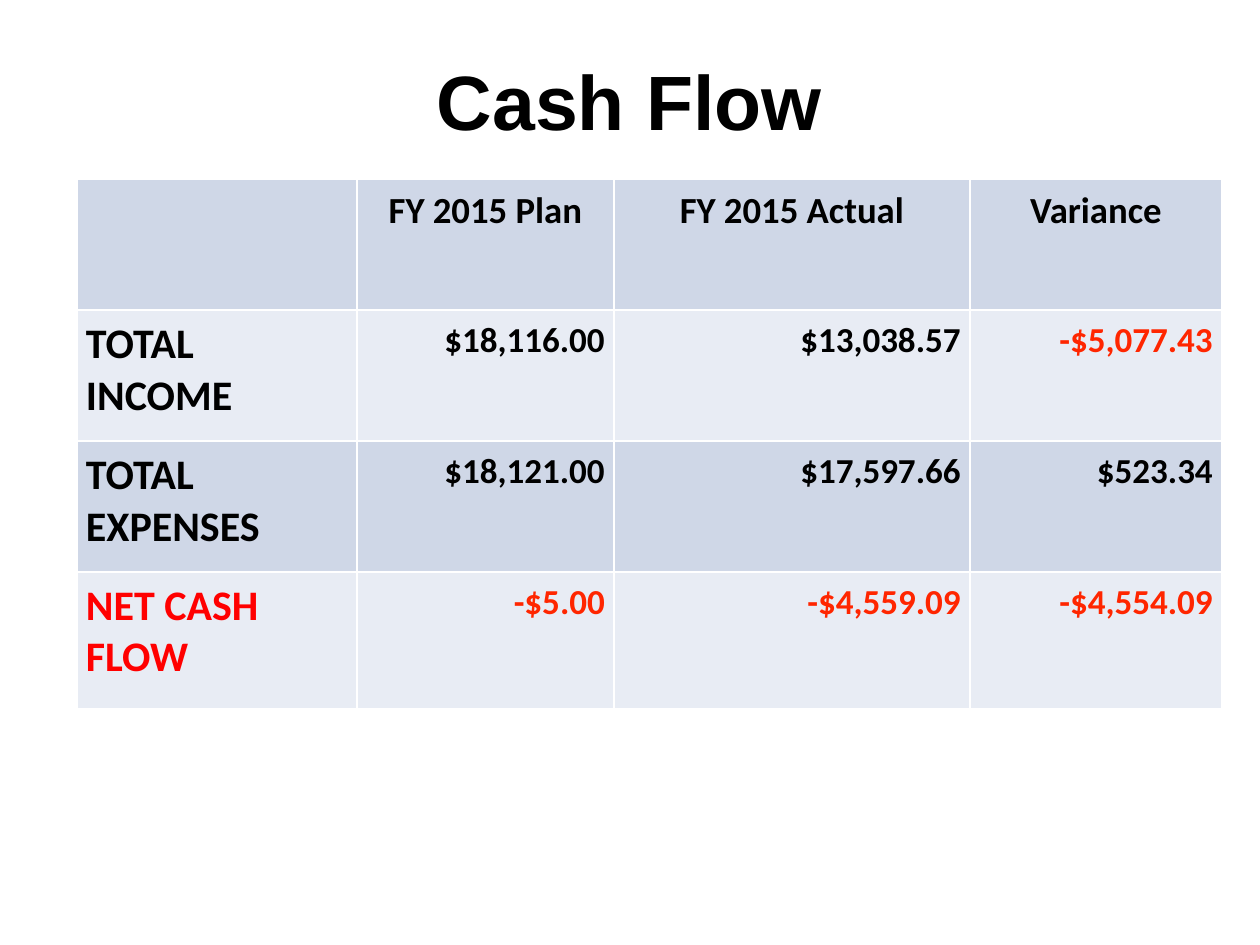
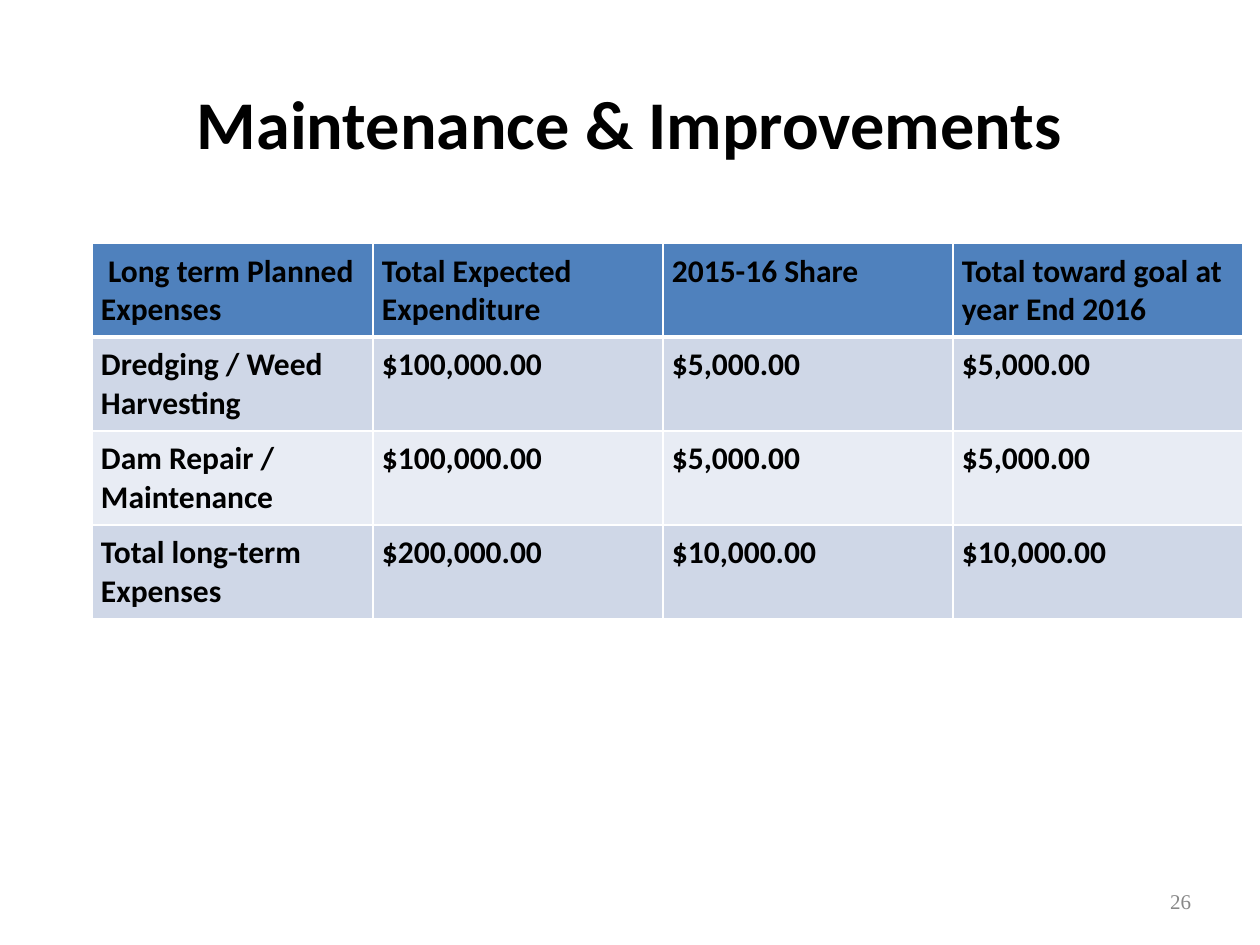
from lxml import etree
from pptx import Presentation
from pptx.dml.color import RGBColor
from pptx.enum.text import MSO_ANCHOR, PP_ALIGN
from pptx.oxml.ns import qn
from pptx.util import Pt

LEFT, CENTER, RIGHT = PP_ALIGN.LEFT, PP_ALIGN.CENTER, PP_ALIGN.RIGHT
MIDDLE = MSO_ANCHOR.MIDDLE
EMU_PER_PX = 914400 / 126
BLANK_LAYOUT = 6
TEXT_INSET, CELL_INSET = 6, 9
SIDES = ("left", "right", "top", "bottom")

COLORS = {
    "ink": "000000",
    "border": "FFFFFF",
    "header": "4F81BD",
    "dark_band": "CFD7E7",
    "light_band": "E8ECF4",
    "negative": "FF2600",
    "deficit": "FF0000",
    "page_number": "888888",
}

CASH_FLOW = [
    ["", "FY 2015 Plan", "FY 2015 Actual", "Variance"],
    ["TOTAL INCOME", "$18,116.00", "$13,038.57", "-$5,077.43"],
    ["TOTAL EXPENSES", "$18,121.00", "$17,597.66", "$523.34"],
    ["NET CASH FLOW", "-$5.00", "-$4,559.09", "-$4,554.09"],
]
LONG_TERM_EXPENSES = [
    [" Long term Planned Expenses", "Total Expected Expenditure",
     "2015-16 Share", "Total toward goal at year End 2016"],
    ["Dredging / Weed Harvesting", "$100,000.00", "$5,000.00", "$5,000.00"],
    ["Dam Repair / Maintenance", "$100,000.00", "$5,000.00", "$5,000.00"],
    ["Total long-term Expenses", "$200,000.00", "$10,000.00", "$10,000.00"],
]


def px(length):
    return round(length * EMU_PER_PX)


def rgb(name):
    return RGBColor.from_string(COLORS[name])


def set_insets(owner, inset):
    for side in SIDES:
        setattr(owner, f"margin_{side}", px(inset))


def write(frame, text, size, font="Calibri", color="ink", bold=True, align=LEFT):
    paragraph = frame.paragraphs[0]
    paragraph.alignment = align
    run = paragraph.add_run()
    run.text = text
    for attribute, value in {"size": Pt(size), "name": font, "bold": bold}.items():
        setattr(run.font, attribute, value)
    run.font.color.rgb = rgb(color)


def add_text(slide, box, text, **style):
    frame = slide.shapes.add_textbox(*map(px, box)).text_frame
    frame.word_wrap = True
    frame.vertical_anchor = MIDDLE
    set_insets(frame, TEXT_INSET)
    write(frame, text, **style)


def add_title(slide, box, text, size, font):
    add_text(slide, box, text, size=size, font=font, align=CENTER)


def add_page_number(slide, box, number):
    add_text(slide, box, number, size=12, font="Times New Roman",
             color="page_number", bold=False, align=RIGHT)


def set_borders(cell, widths):
    properties = cell._tc.get_or_add_tcPr()
    for side in SIDES:
        line = etree.SubElement(properties, qn(f"a:ln{side[0].upper()}"),
                                w=str(Pt(widths.get(side, 1))))
        fill = etree.SubElement(line, qn("a:solidFill"))
        etree.SubElement(fill, qn("a:srgbClr"), val=COLORS["border"])


def add_grid(slide, origin, widths, heights, rows, bands, cell_style, header_rule=1):
    box = (*origin, sum(widths), sum(heights))
    table = slide.shapes.add_table(len(rows), len(widths), *map(px, box)).table
    for column, width in zip(table.columns, widths):
        column.width = px(width)
    for row, height in zip(table.rows, heights):
        row.height = px(height)
    for r, texts in enumerate(rows):
        for c, text in enumerate(texts):
            cell = table.cell(r, c)
            set_insets(cell, CELL_INSET)
            rule_side = {0: "bottom", 1: "top"}.get(r)
            set_borders(cell, {rule_side: header_rule})
            cell.fill.solid()
            cell.fill.fore_color.rgb = rgb(bands[r])
            if text:
                write(cell.text_frame, text, **cell_style(r, c, text))


def cash_flow_style(row, column, text):
    if row == 0:
        return {"size": 21, "align": CENTER}
    if column == 0:
        return {"size": 24, "color": "deficit" if text.startswith("NET") else "ink"}
    color = "negative" if text.startswith("-") else "ink"
    return {"size": 20, "color": color, "align": RIGHT}


def expense_style(row, column, text):
    return {"size": 18}


def build_cash_flow(slide):
    add_title(slide, (94, 42, 1071, 115), "Cash Flow", 44, "Arial")
    add_grid(slide, (77, 179), (280, 257, 356, 252), (131, 131, 131, 137), CASH_FLOW,
             ("dark_band", "light_band") * 2, cash_flow_style)


def build_maintenance(slide):
    add_title(slide, (94, 43, 1071, 158), "Maintenance & Improvements", 39, "Calibri")
    add_page_number(slide, (903, 882, 294, 38), "26")
    add_grid(slide, (92, 243), (281, 290, 290, 290), (94,) * 4, LONG_TERM_EXPENSES,
             ("header", "dark_band", "light_band", "dark_band"), expense_style,
             header_rule=3)


def main():
    deck = Presentation()
    deck.slide_width, deck.slide_height = px(1260), px(945)
    for build in (build_cash_flow, build_maintenance):
        build(deck.slides.add_slide(deck.slide_layouts[BLANK_LAYOUT]))
    deck.save("out.pptx")


if __name__ == "__main__":
    main()
